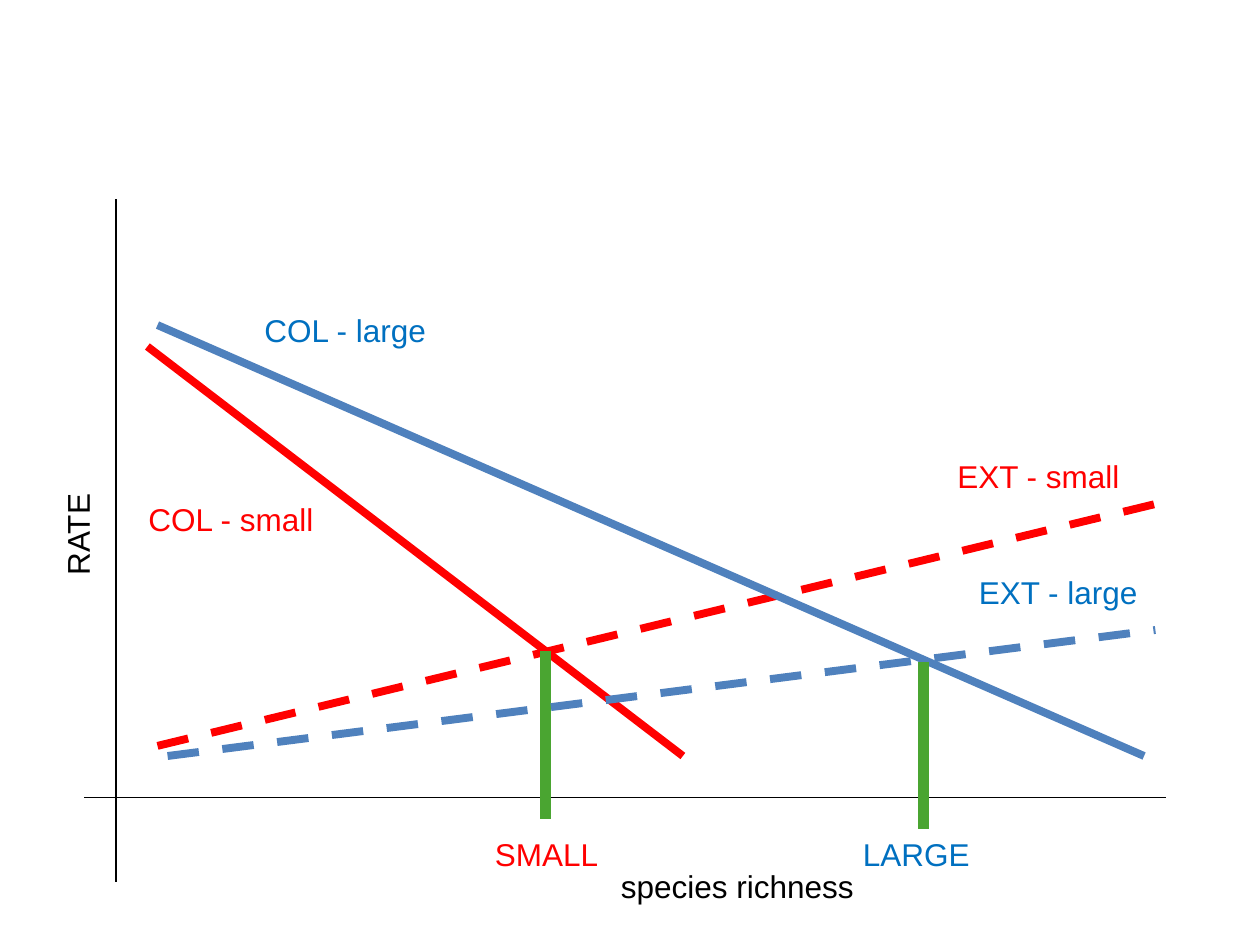
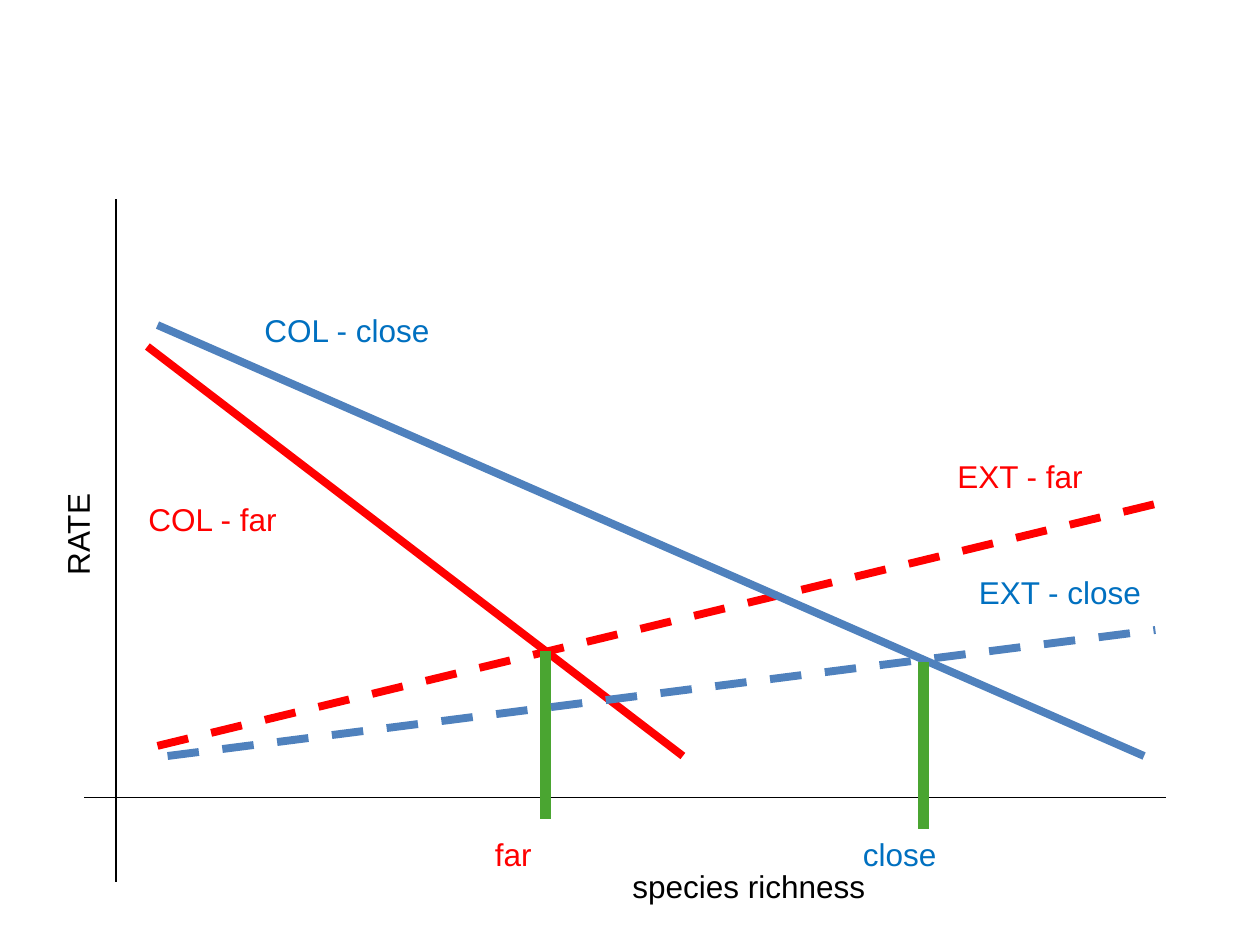
from lxml import etree
from pptx import Presentation
from pptx.dml.color import RGBColor
from pptx.enum import dml, shapes, text
from pptx.oxml.ns import qn
from pptx.util import Inches, Pt

COLORS = {
    "axis": "000000",
    "low": "FF0000",
    "high": "4F81BD",
    "high_text": "0070C0",
    "equilibrium": "4AA531",
}
FONT = {"name": "Arial", "size": Pt(18)}
LABEL_HEIGHT = 0.4
BLANK_LAYOUT = 6


def add_line(slide, start, end, color, width, dashed=False):
    points = [Inches(v) for v in (*start, *end)]
    line = slide.shapes.add_connector(shapes.MSO_CONNECTOR.STRAIGHT, *points)
    line.line.color.rgb = RGBColor.from_string(COLORS[color])
    line.line.width = Pt(width)
    if dashed:
        line.line.dash_style = dml.MSO_LINE.DASH
    etree.SubElement(line._element.spPr, qn("a:effectLst"))


def add_label(slide, words, left, top, width, color, rotation=0):
    box = [Inches(v) for v in (left, top, width, LABEL_HEIGHT)]
    sp = slide.shapes.add_textbox(*box)
    sp.rotation = rotation
    tf = sp.text_frame
    tf.word_wrap = True
    tf.auto_size = text.MSO_AUTO_SIZE.SHAPE_TO_FIT_TEXT
    r = tf.paragraphs[0].add_run()
    r.text = words
    for name, value in FONT.items():
        setattr(r.font, name, value)
    r.font.color.rgb = RGBColor.from_string(COLORS[color])


def add_axes(slide, richness_left):
    add_line(slide, (0.92, 1.58), (0.92, 7), "axis", 0.75)
    add_line(slide, (0.67, 6.33), (9.25, 6.33), "axis", 0.75)
    add_label(slide, "RATE", -0.72, 3.13, 2.67, "axis", rotation=270)
    add_label(slide, "species richness", richness_left, 6.83, 4.25, "axis")


def add_low_island(slide, island, equilibrium):
    """Rates for the island with fewer species: small or far."""
    add_line(slide, (1.17, 2.75), (5.42, 6), "low", 4.5)
    add_line(slide, (1.25, 5.92), (9.17, 4), "low", 4.5, dashed=True)
    add_label(slide, f"COL - {island}", 1.08, 3.92, 1.67, "low")
    add_label(slide, f"EXT - {island}", 7.5, 3.58, 1.67, "low")
    add_line(slide, (4.33, 5.17), (4.33, 6.5), "equilibrium", 6)
    add_label(slide, equilibrium, 3.83, 6.58, 1.33, "low")


def add_high_island(slide, island, equilibrium):
    """Rates for the island with more species: large or close."""
    add_line(slide, (1.25, 2.58), (9.08, 6), "high", 4.5)
    add_line(slide, (1.33, 6), (9.17, 5), "high", 4.5, dashed=True)
    add_label(slide, f"COL - {island}", 2, 2.42, 1.67, "high_text")
    add_label(slide, f"EXT - {island}", 7.67, 4.5, 1.67, "high_text")
    add_line(slide, (7.33, 5.25), (7.33, 6.58), "equilibrium", 6)
    add_label(slide, equilibrium, 6.75, 6.58, 1.33, "high_text")


def add_rate_slide(prs, low, high, richness_left):
    slide = prs.slides.add_slide(prs.slide_layouts[BLANK_LAYOUT])
    add_axes(slide, richness_left)
    add_low_island(slide, *low)
    add_high_island(slide, *high)


def main():
    prs = Presentation()
    prs.slide_width, prs.slide_height = Inches(10), Inches(7.5)
    add_rate_slide(prs, ("small", "SMALL"), ("large", "LARGE"), 4.83)
    add_rate_slide(prs, ("far", "far"), ("close", "close"), 4.92)
    prs.save("out.pptx")


if __name__ == "__main__":
    main()
